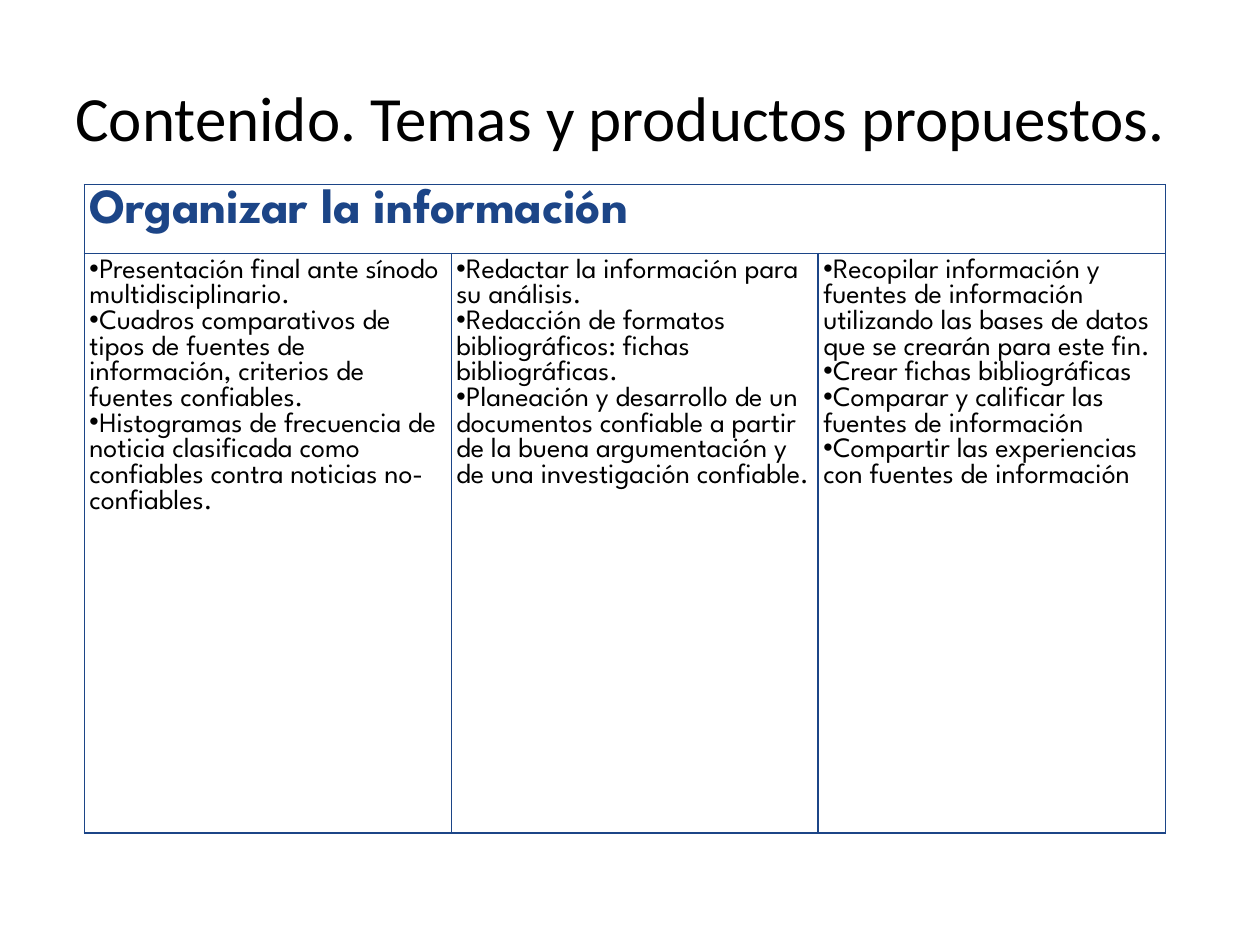
from lxml import etree
from pptx import Presentation
from pptx.dml.color import RGBColor
from pptx.enum import text
from pptx.oxml import parse_xml
from pptx.oxml.ns import nsdecls, qn
from pptx.util import Pt

BLUE, BLACK = "1C4587", "000000"
FACE = "League Spartan"
HEAD = "Organizar la información"
COLS = [
    ["Presentación final ante sínodo multidisciplinario.",
     "Cuadros comparativos de tipos de fuentes de información, "
     "criterios de fuentes confiables.",
     "Histogramas de frecuencia de noticia clasificada como "
     "confiables contra noticias no-confiables."],
    ["Redactar la información para su análisis.",
     "Redacción de formatos bibliográficos: fichas bibliográficas.",
     "Planeación y desarrollo de un documentos confiable a partir de la "
     "buena argumentación y de una investigación confiable."],
    ["Recopilar información y fuentes de información utilizando las bases "
     "de datos que se crearán para este fin.",
     "Crear fichas bibliográficas",
     "Comparar y calificar las fuentes de información",
     "Compartir las experiencias con fuentes de información"],
]


def paint(font, color):
    font.color.rgb = RGBColor.from_string(color)


def style(frame, face, size, color, bold=False):
    for para in frame.paragraphs:
        for run in para.runs:
            run.font.name, run.font.size, run.font.bold = face, Pt(size), bold
            paint(run.font, color)


def bullet(para):
    props = para._p.get_or_add_pPr()
    props.set("marL", "0")
    props.set("indent", "0")
    etree.SubElement(props, qn("a:buChar")).set("char", "•")


def border(cell, color, width):
    props = cell._tc.get_or_add_tcPr()
    for i, side in enumerate("LRTB"):
        props.insert(i, parse_xml(
            f'<a:ln{side} {nsdecls("a")} w="{Pt(width)}"><a:solidFill>'
            f'<a:srgbClr val="{color}"/></a:solidFill></a:ln{side}>'))


def title(slide, words):
    box = slide.shapes.add_textbox(Pt(36), Pt(21.6), Pt(648), Pt(90))
    frame = box.text_frame
    frame.word_wrap = True
    frame.vertical_anchor = text.MSO_ANCHOR.MIDDLE
    frame.text = words
    frame.paragraphs[0].alignment = text.PP_ALIGN.JUSTIFY
    style(frame, "Calibri", 36, BLACK)


def grid(slide, widths, heights):
    table = slide.shapes.add_table(
        len(heights), len(widths), Pt(48.2), Pt(105.5),
        Pt(sum(widths)), Pt(sum(heights))).table
    table.first_row = table.horz_banding = False
    for col, width in zip(table.columns, widths):
        col.width = Pt(width)
    for row, height in zip(table.rows, heights):
        row.height = Pt(height)
    for cell in table.iter_cells():
        cell.fill.background()
        border(cell, BLUE, 1)
        cell.margin_left = cell.margin_right = Pt(2.9)
        cell.margin_top = cell.margin_bottom = Pt(2.9)
    return table


def main():
    deck = Presentation()
    deck.slide_width, deck.slide_height = Pt(720), Pt(540)
    slide = deck.slides.add_slide(deck.slide_layouts[6])

    title(slide, "Contenido. Temas y productos propuestos.")

    # Heading row across all columns
    table = grid(slide, [209.7, 209.7, 198.4], [37.6, 331])
    head = table.cell(0, 0)
    head.merge(table.cell(0, 2))
    head.text_frame.text = HEAD
    style(head.text_frame, FACE, 28, BLUE, True)

    # Bulleted columns
    for i, items in enumerate(COLS):
        frame = table.cell(1, i).text_frame
        frame.text = "\n".join(items)
        for para in frame.paragraphs:
            bullet(para)
        style(frame, FACE, 16, BLACK)

    deck.save("out.pptx")


if __name__ == "__main__":
    main()
